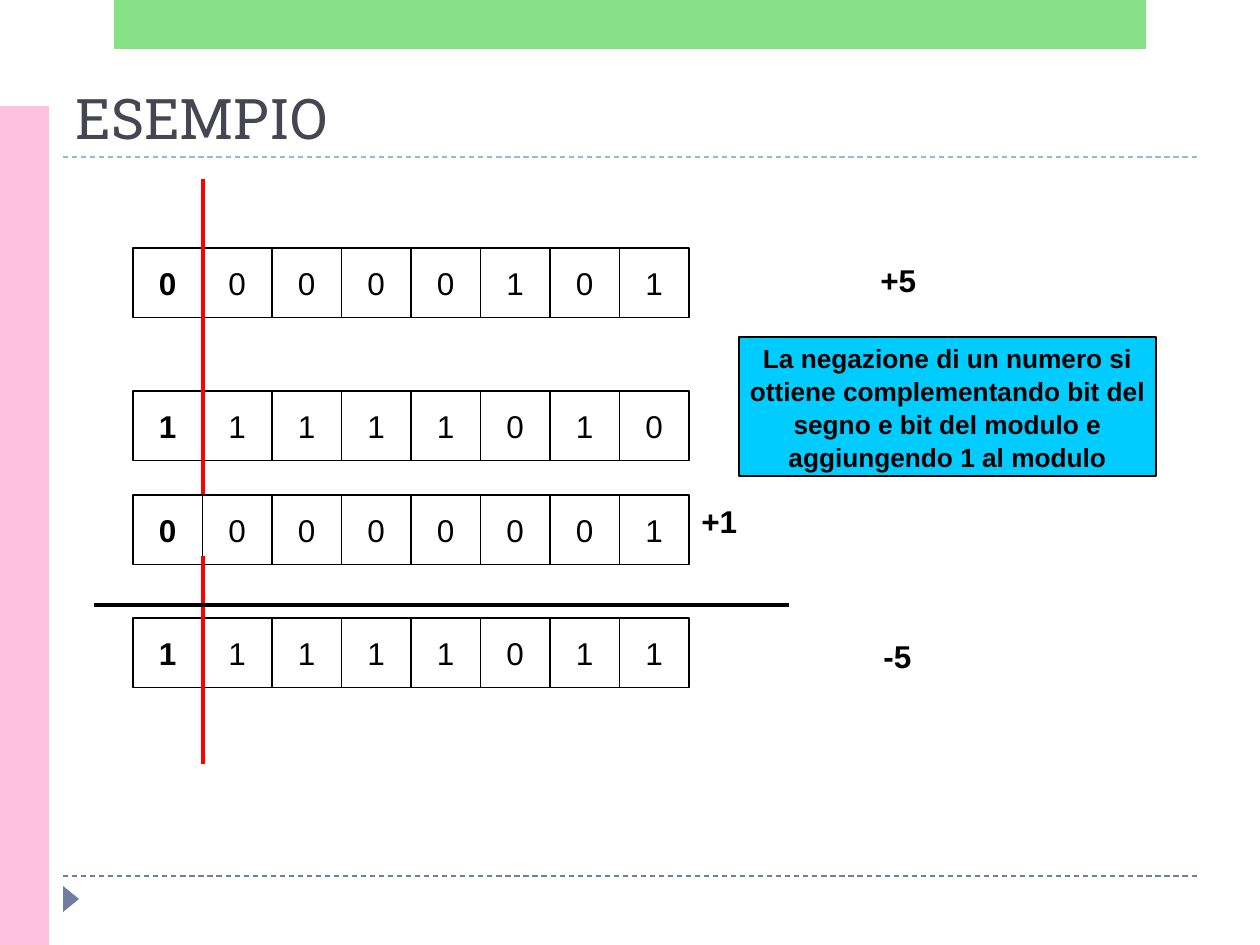
from lxml.etree import SubElement
from pptx import Presentation
from pptx.dml.color import RGBColor
from pptx.enum.dml import MSO_LINE
from pptx.enum.shapes import MSO_CONNECTOR, MSO_SHAPE
from pptx.enum.text import MSO_ANCHOR, PP_ALIGN
from pptx.oxml.ns import qn
from pptx.util import Emu, Pt

SCALE = 914400 / 126  # EMU per px


def emu(*lengths):
    return [Emu(round(length * SCALE)) for length in lengths]


def paint(target, color):
    """Colour a fill, a line or a font."""
    if hasattr(target, "solid"):
        target.solid()
        target = target.fore_color
    else:
        target = target.color
    target.rgb = RGBColor.from_string(color)


deck = Presentation()
deck.slide_width, deck.slide_height = emu(1260, 945)
slide = deck.slides.add_slide(deck.slide_layouts[6])

# Dashed rules, coloured bars and corner triangle
rules = []
for y, color in ((876, "727CA3"), (157, "9FB8CD")):
    rule = slide.shapes.add_connector(MSO_CONNECTOR.STRAIGHT, *emu(63, y, 1197, y))
    rule.line.dash_style = MSO_LINE.DASH
    rules.append((rule, color, 0.75))

decor = []
for kind, box, color in (
    (MSO_SHAPE.ISOSCELES_TRIANGLE, (58, 891, 26, 16), "727CA3"),
    (MSO_SHAPE.RECTANGLE, (0, 106, 49, 839), "FFC1E0"),
    (MSO_SHAPE.RECTANGLE, (114, 0, 1032, 49), "62D862"),
):
    ornament = slide.shapes.add_shape(kind, *emu(*box))
    ornament.shadow.inherit = False
    ornament.line.fill.background()
    paint(ornament.fill, color)
    decor.append(ornament)
corner, side_bar, top_bar = decor
corner.rotation = 90
top_color = top_bar.fill._xPr.find(qn("a:solidFill"))[0]
SubElement(top_color, qn("a:alpha"), val="76000")

# Text formats
FORMATS = {
    "title": {"name": "Roboto Slab", "size": Pt(32), "bold": False},
    "bit": {"name": "Arial", "size": Pt(18), "bold": False},
    "strong": {"name": "Arial", "size": Pt(18), "bold": True},
    "note": {"name": "Arial", "size": Pt(15), "bold": True},
}
texts = []  # shape, lines, format, colour, alignment, anchor

# Title and decimal values
for words, box, style, color, anchor in (
    ("ESEMPIO", (63, 69, 1134, 88), "title", "464653", MSO_ANCHOR.BOTTOM),
    ("+5", (868, 255, 77, 63), "strong", "000000", MSO_ANCHOR.TOP),
    ("-5", (871, 631, 77, 63), "strong", "000000", MSO_ANCHOR.TOP),
    ("+1", (689, 496, 77, 63), "strong", "000000", MSO_ANCHOR.TOP),
):
    caption = slide.shapes.add_textbox(*emu(*box))
    caption.text_frame.word_wrap = True
    texts.append((caption, [words], style, color, PP_ALIGN.LEFT, anchor))

# Binary numbers, each with its part of the line after the sign bit
CELL = 139 / 2
boxes = []
for bits, top, sign_line in (
    ("00000101", 248, (179, 387)),
    ("11111010", 391, (328, 536)),
    ("00000001", 495, None),
    ("11111011", 618, (556, 764)),
):
    number = slide.shapes.add_group_shape()
    for column, bit in enumerate(bits):
        cell = number.shapes.add_shape(
            MSO_SHAPE.RECTANGLE, *emu(133 + column * CELL, top, CELL, CELL))
        boxes.append((cell, "FFFFFF"))
        style = "bit" if column else "strong"
        texts.append((cell, [bit], style, "000000", PP_ALIGN.CENTER, MSO_ANCHOR.MIDDLE))
    if sign_line:
        start, end = sign_line
        divider = number.shapes.add_connector(
            MSO_CONNECTOR.STRAIGHT, *emu(203, start, 203, end))
        rules.append((divider, "FF0000", 2))

# Sum line
sum_line = slide.shapes.add_connector(MSO_CONNECTOR.STRAIGHT, *emu(94, 605, 789, 605))
rules.append((sum_line, "000000", 2))

# Negation rule
negation = slide.shapes.add_shape(MSO_SHAPE.RECTANGLE, *emu(739, 337, 417, 139))
boxes.append((negation, "00CCFF"))
texts.append((negation, [
    "La negazione di un numero si",
    "ottiene complementando bit del",
    "segno e bit del modulo e",
    "aggiungendo 1 al modulo",
], "note", "000000", PP_ALIGN.CENTER, MSO_ANCHOR.MIDDLE))

# Finish lines, boxes and text
for rule, color, width in rules:
    paint(rule.line, color)
    rule.line.width = Pt(width)
    SubElement(rule._element.spPr, qn("a:effectLst"))

for box, color in boxes:
    box.shadow.inherit = False
    paint(box.fill, color)
    paint(box.line, "000000")
    box.line.width = Pt(0.75)
    box.text_frame.word_wrap = False

for holder, lines, style, color, align, anchor in texts:
    frame = holder.text_frame
    frame.vertical_anchor = anchor
    frame.text = "\n".join(lines)
    for paragraph in frame.paragraphs:
        paragraph.alignment = align
        if style == "note":
            paragraph.line_spacing = 1.05
        font = paragraph.runs[0].font
        for attribute, value in FORMATS[style].items():
            setattr(font, attribute, value)
        paint(font, color)

deck.save("out.pptx")
